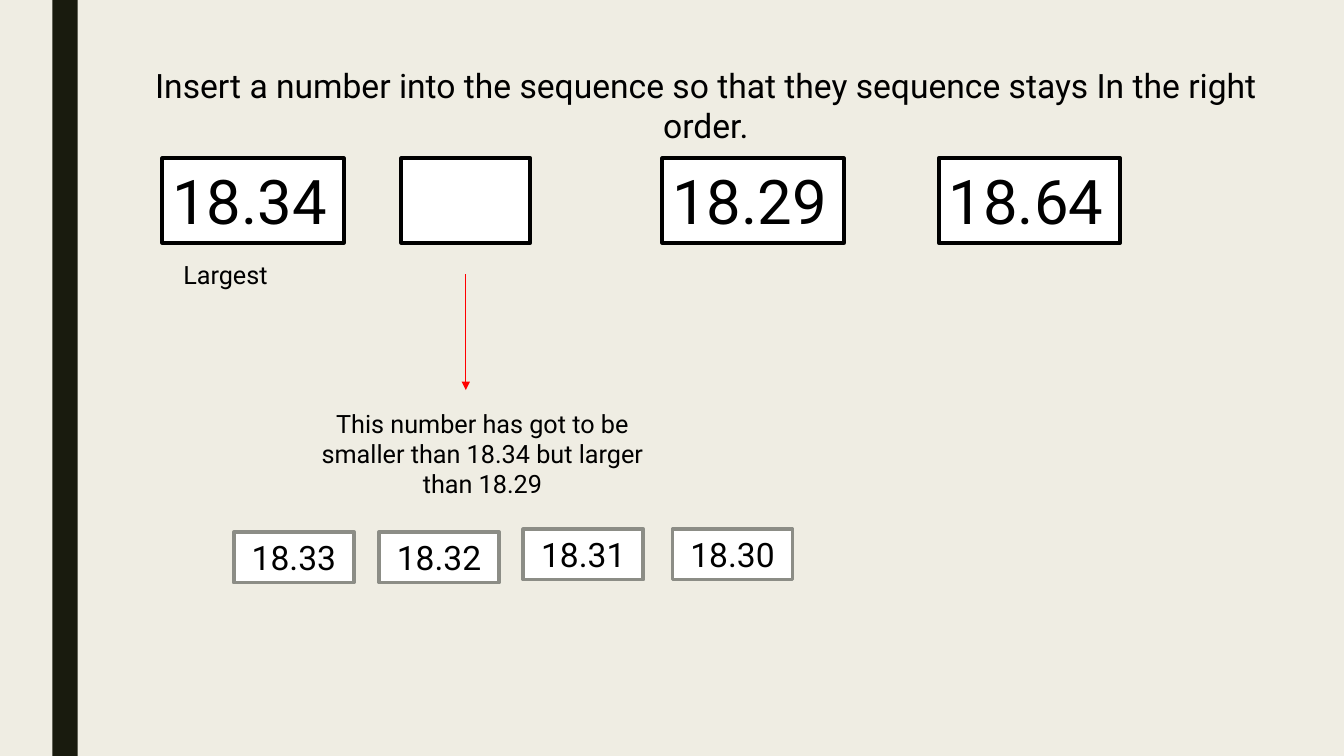
from dataclasses import dataclass

from pptx import Presentation
from pptx.dml.color import RGBColor
from pptx.enum.shapes import MSO_CONNECTOR, MSO_SHAPE
from pptx.enum.text import MSO_ANCHOR, MSO_AUTO_SIZE, PP_ALIGN
from pptx.oxml.ns import qn
from pptx.slide import Slide
from pptx.text.text import TextFrame
from pptx.util import Inches, Pt
from lxml.etree import SubElement

BACKGROUND = RGBColor(0xEF, 0xED, 0xE3)
BAND = RGBColor(0x19, 0x1B, 0x0E)
BLACK = RGBColor(0x00, 0x00, 0x00)
WHITE = RGBColor(0xFF, 0xFF, 0xFF)
GREY = RGBColor(0x8C, 0x8D, 0x86)
RED = RGBColor(0xFF, 0x00, 0x00)
FONT = "Roboto"


@dataclass(frozen=True)
class NumberStyle:
    height: float
    outline: RGBColor
    size: int
    alignment: PP_ALIGN


@dataclass(frozen=True)
class NumberBox:
    text: str
    left: float
    top: float
    width: float
    style: NumberStyle


@dataclass(frozen=True)
class Label:
    text: str
    left: float
    top: float
    width: float
    height: float
    alignment: PP_ALIGN


SEQUENCE = NumberStyle(0.84, BLACK, 44, PP_ALIGN.LEFT)
ANSWER = NumberStyle(0.5, GREY, 24, PP_ALIGN.CENTER)

NUMBER_BOXES = [
    NumberBox("18.34", 1.61, 1.57, 1.8, SEQUENCE),
    NumberBox("", 3.98, 1.57, 1.28, SEQUENCE),
    NumberBox("18.29", 6.57, 1.57, 1.8, SEQUENCE),
    NumberBox("18.64", 9.31, 1.57, 1.8, SEQUENCE),
    NumberBox("18.33", 2.32, 5.28, 1.19, ANSWER),
    NumberBox("18.32", 3.76, 5.28, 1.19, ANSWER),
    NumberBox("18.31", 5.19, 5.25, 1.19, ANSWER),
    NumberBox("18.30", 6.67, 5.25, 1.19, ANSWER),
]

LABELS = [
    Label("Largest", 1.72, 2.52, 1.06, 0.4, PP_ALIGN.LEFT),
    Label(
        "This number has got to be smaller than 18.34 but larger than 18.29",
        2.91, 4, 3.75, 1.01, PP_ALIGN.CENTER,
    ),
]


def write_text(frame: TextFrame, text: str, size: int, alignment: PP_ALIGN) -> None:
    frame.word_wrap = True
    frame.auto_size = MSO_AUTO_SIZE.NONE
    frame.vertical_anchor = MSO_ANCHOR.TOP
    paragraph = frame.paragraphs[0]
    paragraph.alignment = alignment
    run = paragraph.add_run()
    run.text = text
    run.font.name = FONT
    run.font.size = Pt(size)
    run.font.color.rgb = BLACK


def draw_title(slide: Slide) -> None:
    title = slide.shapes.title
    title.left, title.top = Inches(1.14), Inches(0.59)
    title.width, title.height = Inches(11.72), Inches(0.5)
    write_text(
        title.text_frame,
        "Insert a number into the sequence so that they sequence stays In the right order.",
        24,
        PP_ALIGN.CENTER,
    )


def draw_band(slide: Slide) -> None:
    band = slide.shapes.add_shape(
        MSO_SHAPE.RECTANGLE, Inches(0.52), Inches(0), Inches(0.25), Inches(7.5)
    )
    band.shadow.inherit = False
    band.fill.solid()
    band.fill.fore_color.rgb = BAND
    band.line.fill.background()


def draw_number_box(slide: Slide, box: NumberBox) -> None:
    shape = slide.shapes.add_shape(
        MSO_SHAPE.RECTANGLE,
        Inches(box.left), Inches(box.top), Inches(box.width), Inches(box.style.height),
    )
    shape.shadow.inherit = False
    shape.fill.solid()
    shape.fill.fore_color.rgb = WHITE
    shape.line.color.rgb = box.style.outline
    shape.line.width = Pt(2.75)
    if box.text:
        write_text(shape.text_frame, box.text, box.style.size, box.style.alignment)


def draw_label(slide: Slide, label: Label) -> None:
    shape = slide.shapes.add_textbox(
        Inches(label.left), Inches(label.top), Inches(label.width), Inches(label.height)
    )
    write_text(shape.text_frame, label.text, 18, label.alignment)


def draw_arrow(slide: Slide) -> None:
    arrow = slide.shapes.add_connector(
        MSO_CONNECTOR.STRAIGHT, Inches(4.62), Inches(2.72), Inches(4.62), Inches(3.87)
    )
    arrow.line.color.rgb = RED
    arrow.line.width = Pt(0.5)
    properties = arrow.element.spPr
    SubElement(properties.find(qn("a:ln")), qn("a:tailEnd"), type="triangle")
    SubElement(properties, qn("a:effectLst"))


def main() -> None:
    presentation = Presentation()
    presentation.slide_width = Inches(13.33)
    presentation.slide_height = Inches(7.5)
    slide = presentation.slides.add_slide(presentation.slide_layouts.get_by_name("Title Only"))
    slide.background.fill.solid()
    slide.background.fill.fore_color.rgb = BACKGROUND

    draw_band(slide)
    draw_title(slide)
    for box in NUMBER_BOXES:
        draw_number_box(slide, box)
    for label in LABELS:
        draw_label(slide, label)
    draw_arrow(slide)

    presentation.save("out.pptx")


if __name__ == "__main__":
    main()
